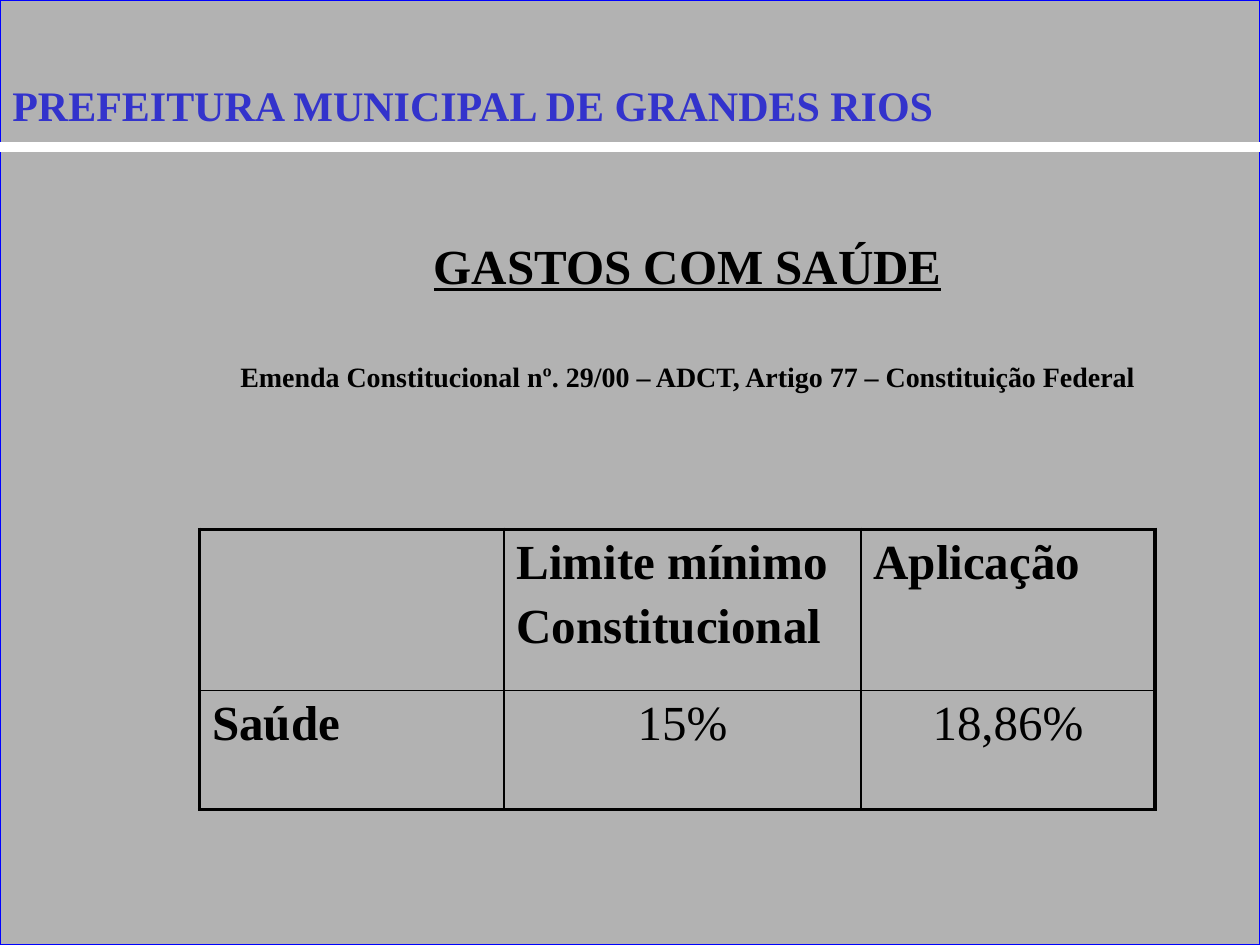
from lxml.etree import SubElement
from pptx import Presentation
from pptx.dml.color import RGBColor
from pptx.enum.shapes import MSO_CONNECTOR as CONN, MSO_SHAPE as SHAPE
from pptx.enum.text import MSO_ANCHOR as ANCHOR, PP_ALIGN as ALIGN
from pptx.oxml.ns import qn
from pptx.util import Pt

BLACK = RGBColor(0x00, 0x00, 0x00)
WHITE = RGBColor(0xFF, 0xFF, 0xFF)
GRAY = RGBColor(0xB2, 0xB2, 0xB2)
BLUE = RGBColor(0x00, 0x00, 0xFF)
TITLE_BLUE = RGBColor(0x33, 0x33, 0xCC)
FONT = "Times New Roman"
THICK, THIN = 2.25, 1


def add_run(p, text, size, color=BLACK, bold=True, underline=False):
    r = p.add_run()
    r.text = text
    f = r.font
    f.size, f.name, f.bold, f.underline = Pt(size), FONT, bold, underline
    f.color.rgb = color
    return r


def add_text_box(slide, x, y, w, h):
    tf = slide.shapes.add_textbox(Pt(x), Pt(y), Pt(w), Pt(h)).text_frame
    tf.word_wrap = True
    return tf


def add_text_shadow(r):
    rpr = r.font._element
    effects = SubElement(rpr, qn("a:effectLst"))
    shadow = SubElement(effects, qn("a:outerShdw"), dist="28398", dir="2700000")
    SubElement(shadow, qn("a:srgbClr"), val="808080")
    # Effects come right after the fill
    rpr.find(qn("a:solidFill")).addnext(effects)


def set_border(cell, side, width):
    ln = SubElement(cell._tc.get_or_add_tcPr(), qn("a:" + side), w=str(Pt(width)))
    fill = SubElement(ln, qn("a:solidFill"))
    SubElement(fill, qn("a:srgbClr"), val=str(BLACK))


def add_backdrop(slide, x, y, w, h):
    sp = slide.shapes.add_shape(SHAPE.RECTANGLE, Pt(x), Pt(y), Pt(w), Pt(h))
    sp.shadow.inherit = False
    sp.fill.solid()
    sp.fill.fore_color.rgb = GRAY
    sp.line.color.rgb = BLUE
    sp.line.width = Pt(0.75)


def add_rule(slide, x, y, w):
    line = slide.shapes.add_connector(CONN.STRAIGHT, Pt(x), Pt(y), Pt(x + w), Pt(y))
    line.line.color.rgb = WHITE
    line.line.width = Pt(6)
    SubElement(line._element.spPr, qn("a:effectLst"))


def add_heading(slide, x, y, w, h):
    p = add_text_box(slide, x, y, w, h).paragraphs[0]
    add_text_shadow(add_run(p, "PREFEITURA MUNICIPAL DE GRANDES RIOS", 24, TITLE_BLUE))


def add_subject(slide, x, y, w, h):
    tf = add_text_box(slide, x, y, w, h)
    lines = [
        ("GASTOS COM SAÚDE", 28, True, 3),
        ("Emenda Constitucional nº. 29/00 – ADCT, Artigo 77 – Constituição Federal",
         16, False, 28),
    ]
    for i, (text, size, underline, before) in enumerate(lines):
        p = tf.add_paragraph() if i else tf.paragraphs[0]
        p.alignment = ALIGN.CENTER
        p.line_spacing = 1.5
        p.space_before = Pt(before)
        add_run(p, text, size, underline=underline)


def add_spending_table(slide, x, y, w, h):
    rows = [
        [[], ["Limite mínimo", "Constitucional"], ["Aplicação"]],
        [["Saúde"], ["15%"], ["18,86%"]],
    ]
    widths, heights = (174, 204, 168), (92, 68)
    table = slide.shapes.add_table(2, 3, Pt(x), Pt(y), Pt(w), Pt(h)).table
    table.first_row = table.horz_banding = False
    for col, width in zip(table.columns, widths):
        col.width = Pt(width)
    for row, height in zip(table.rows, heights):
        row.height = Pt(height)

    for i, row in enumerate(rows):
        for j, lines in enumerate(row):
            cell = table.cell(i, j)
            cell.vertical_anchor = ANCHOR.TOP
            is_value = i > 0 and j > 0
            for k, text in enumerate(lines):
                tf = cell.text_frame
                p = tf.add_paragraph() if k else tf.paragraphs[0]
                p.alignment = ALIGN.CENTER if is_value else ALIGN.LEFT
                p.space_before = Pt(5.6)
                add_run(p, text, 28, bold=not is_value)
            # Thick outer frame, thin inner lines
            outer = {"lnL": j == 0, "lnR": j == 2, "lnT": i == 0, "lnB": i == 1}
            for side, on_edge in outer.items():
                set_border(cell, side, THICK if on_edge else THIN)
            cell.fill.background()


def main():
    prs = Presentation()
    prs.slide_width, prs.slide_height = Pt(720), Pt(540)
    slide = prs.slides.add_slide(prs.slide_layouts[6])
    add_backdrop(slide, 0, 0, 720, 540)
    add_rule(slide, 0, 84, 720)
    add_subject(slide, 102, 114, 582, 505)
    add_spending_table(slide, 114, 302.5, 546, 160)
    add_heading(slide, 0, 42, 592.5, 36)
    prs.save("out.pptx")


if __name__ == "__main__":
    main()
